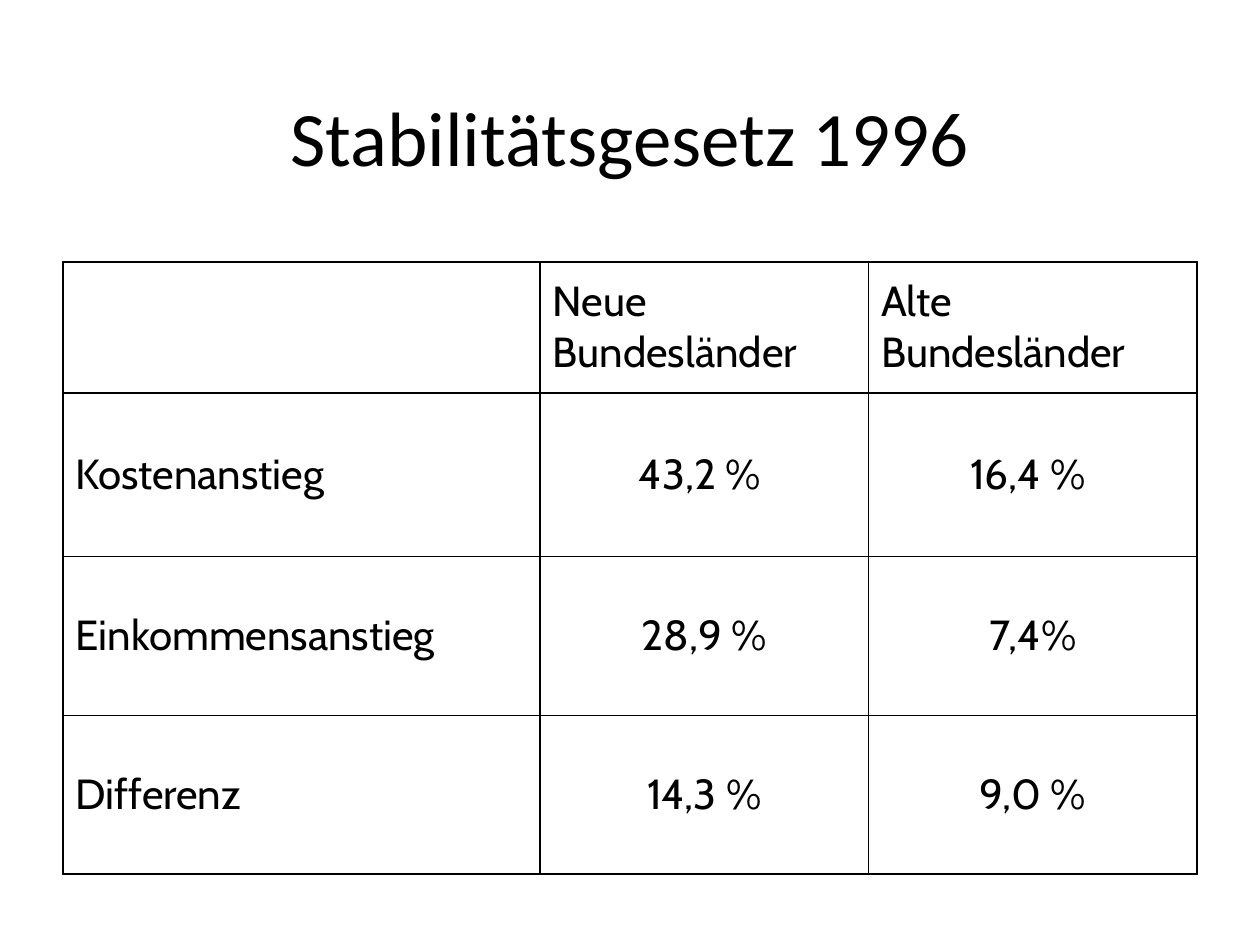
from dataclasses import dataclass
from lxml.etree import SubElement
from pptx import Presentation
from pptx.dml.color import RGBColor
from pptx.enum.text import MSO_VERTICAL_ANCHOR as Anchor, PP_PARAGRAPH_ALIGNMENT as Align
from pptx.oxml.ns import qn
from pptx.slide import Slide
from pptx.util import Cm, Pt

BLACK = RGBColor(0, 0, 0)
WHITE = RGBColor(255, 255, 255)

LEFT, WIDTH = 1.27, 22.86
COLUMNS = (9.62, 6.62, 6.62)
ROWS = (2.64, 3.3, 3.2, 3.2)
RATES = (
    ("", "Neue Bundesländer", "Alte Bundesländer"),
    ("Kostenanstieg", "43,2 % ", "16,4 % "),
    ("Einkommensanstieg", "28,9 %", "7,4%"),
    ("Differenz", "14,3 %", "9,0 %"),
)


@dataclass
class Painter:
    page: Slide
    title_font: str = "Calibri"
    title_size: int = 44
    table_font: str = "Cabin"
    table_size: int = 24
    border: int = 1

    def add_text(self, para, text, font, size, align):
        para.alignment = align
        span = para.add_run()
        span.text = text
        span.font.name = font
        span.font.size = Pt(size)
        span.font.color.rgb = BLACK

    def title(self, text, left, top, width, height):
        box = self.page.shapes.add_textbox(Cm(left), Cm(top), Cm(width), Cm(height))
        frame = box.text_frame
        frame.word_wrap = True
        frame.vertical_anchor = Anchor.MIDDLE
        self.add_text(frame.paragraphs[0], text, self.title_font, self.title_size, Align.CENTER)

    def outline(self, cell):
        properties = cell._tc.get_or_add_tcPr()
        for position, side in enumerate(("a:lnL", "a:lnR", "a:lnT", "a:lnB")):
            line = SubElement(properties, qn(side), w=str(Pt(self.border)))
            fill = SubElement(line, qn("a:solidFill"))
            SubElement(fill, qn("a:srgbClr"), val=str(BLACK))
            properties.insert(position, line)

    def cell(self, cell, text, align):
        cell.fill.solid()
        cell.fill.fore_color.rgb = WHITE
        cell.vertical_anchor = Anchor.MIDDLE
        self.outline(cell)
        if text:
            para = cell.text_frame.paragraphs[0]
            self.add_text(para, text, self.table_font, self.table_size, align)
            before = SubElement(para._p.get_or_add_pPr(), qn("a:spcBef"))
            SubElement(before, qn("a:spcPct"), val="20000")

    def table(self, left, top, columns, rows, texts):
        table = self.page.shapes.add_table(
            len(rows), len(columns), Cm(left), Cm(top), Cm(sum(columns)), Cm(sum(rows))
        ).table
        for column, width in zip(table.columns, columns):
            column.width = Cm(width)
        for r, (row, height) in enumerate(zip(table.rows, rows)):
            row.height = Cm(height)
            for c, text in enumerate(texts[r]):
                align = Align.CENTER if r and c else Align.LEFT
                self.cell(table.cell(r, c), text, align)


def main():
    deck = Presentation()
    deck.slide_width, deck.slide_height = Cm(25.4), Cm(19.05)
    painter = Painter(deck.slides.add_slide(deck.slide_layouts[6]))
    painter.title("Stabilitätsgesetz 1996", LEFT, 0.81, WIDTH, 3.84)
    painter.table(LEFT, 5.28, COLUMNS, ROWS, RATES)
    deck.save("out.pptx")


if __name__ == "__main__":
    main()
